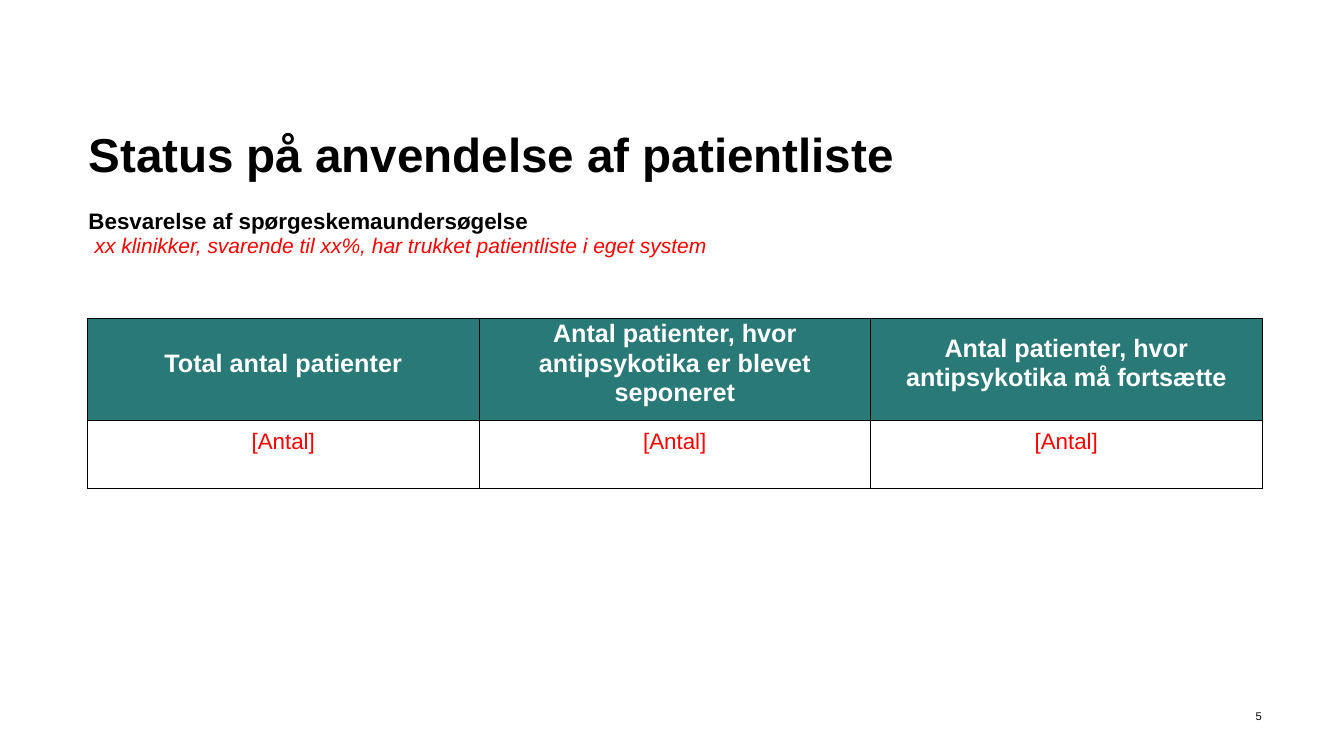
from lxml.etree import SubElement as Sub
from pptx import Presentation
from pptx.dml.color import RGBColor
from pptx.enum.text import MSO_ANCHOR as Anchor, MSO_AUTO_SIZE as Auto, PP_ALIGN as Align
from pptx.oxml.ns import qn
from pptx.util import Pt

FONT = "Arial"
BLACK, WHITE, RED, TEAL = "000000", "FFFFFF", "FF0000", "297976"

HEADS = [
    "Total antal patienter",
    "Antal patienter, hvor\nantipsykotika er blevet\nseponeret",
    "Antal patienter, hvor\nantipsykotika må fortsætte",
]


def color(code):
    return RGBColor.from_string(code)


def write(frame, text, size, code=BLACK, bold=False, italic=False,
          align=Align.LEFT, space=1.0, after=0):
    """Fill a text frame, one paragraph per line of text."""
    frame.text = text
    for para in frame.paragraphs:
        props = para._p.get_or_add_pPr()
        props.set("marL", "0")
        props.set("indent", "0")
        para.alignment = align
        para.line_spacing = space
        para.space_before = Pt(0)
        para.space_after = Pt(after)
        Sub(props, qn("a:buNone"))
        for run in para.runs:
            font = run.font
            font.name, font.size = FONT, Pt(size)
            font.bold, font.italic = bold, italic
            font.color.rgb = color(code)


def place(shape, left, top, width, height):
    shape.left, shape.top = Pt(left), Pt(top)
    shape.width, shape.height = Pt(width), Pt(height)
    frame = shape.text_frame
    frame.word_wrap = True
    frame.auto_size = Auto.NONE
    frame.vertical_anchor = Anchor.MIDDLE
    return frame


def add_box(slide, left, top, width, height, inset):
    box = slide.shapes.add_textbox(0, 0, 0, 0)
    frame = place(box, left, top, width, height)
    frame.margin_left = frame.margin_right = Pt(inset)
    frame.margin_top = frame.margin_bottom = Pt(inset)
    return frame


def edge(cell):
    """Draw a thin black line on all four sides of a cell."""
    props = cell._tc.get_or_add_tcPr()
    for side in ("lnL", "lnR", "lnT", "lnB"):
        line = Sub(props, qn(f"a:{side}"), w=str(Pt(0.75)))
        fill = Sub(line, qn("a:solidFill"))
        Sub(fill, qn("a:srgbClr"), val=BLACK)


def add_grid(slide, left, top, width, heights):
    count = len(HEADS)
    frame = slide.shapes.add_table(len(heights), count, Pt(left), Pt(top),
                                   Pt(width), Pt(sum(heights)))
    table = frame.table
    table.first_row = table.horz_banding = False
    for col in table.columns:
        col.width = Pt(width / count)
    for row, height in zip(table.rows, heights):
        row.height = Pt(height)

    for num, head in enumerate(HEADS):
        # Header cell
        cell = table.cell(0, num)
        edge(cell)
        cell.fill.solid()
        cell.fill.fore_color.rgb = color(TEAL)
        cell.vertical_anchor = Anchor.MIDDLE
        cell.margin_top, cell.margin_bottom = Pt(0), Pt(9.5)
        write(cell.text_frame, head, 18, WHITE, bold=True,
              align=Align.CENTER, space=Pt(21))
        # Value cell
        cell = table.cell(1, num)
        edge(cell)
        cell.fill.background()
        cell.vertical_anchor = Anchor.TOP
        cell.margin_top = Pt(6.5)
        write(cell.text_frame, "[Antal]", 16, RED, align=Align.CENTER)


def main():
    deck = Presentation()
    deck.slide_width, deck.slide_height = Pt(960), Pt(540)
    slide = deck.slides.add_slide(deck.slide_layouts[1])

    # Title and subheading
    title, body = slide.placeholders
    write(place(title, 56, 90.5, 846, 46), "Status på anvendelse af patientliste",
          34, bold=True, space=0.8)
    write(place(body, 56, 143, 846, 29.5), "Besvarelse af spørgeskemaundersøgelse",
          16, bold=True, after=12)

    # Patient counts
    add_grid(slide, 62.5, 227.5, 839, [72.5, 49])

    # Survey result
    note = add_box(slide, 63, 141, 840, 70, 4.5)
    write(note, "xx klinikker, svarende til xx%, har trukket patientliste i eget system",
          15, RED, italic=True, space=0.9)

    # Page number
    page = add_box(slide, 845.5, 504.5, 58, 14, 2)
    page.vertical_anchor = Anchor.BOTTOM
    write(page, "5", 8, align=Align.RIGHT)

    deck.save("out.pptx")


if __name__ == "__main__":
    main()
